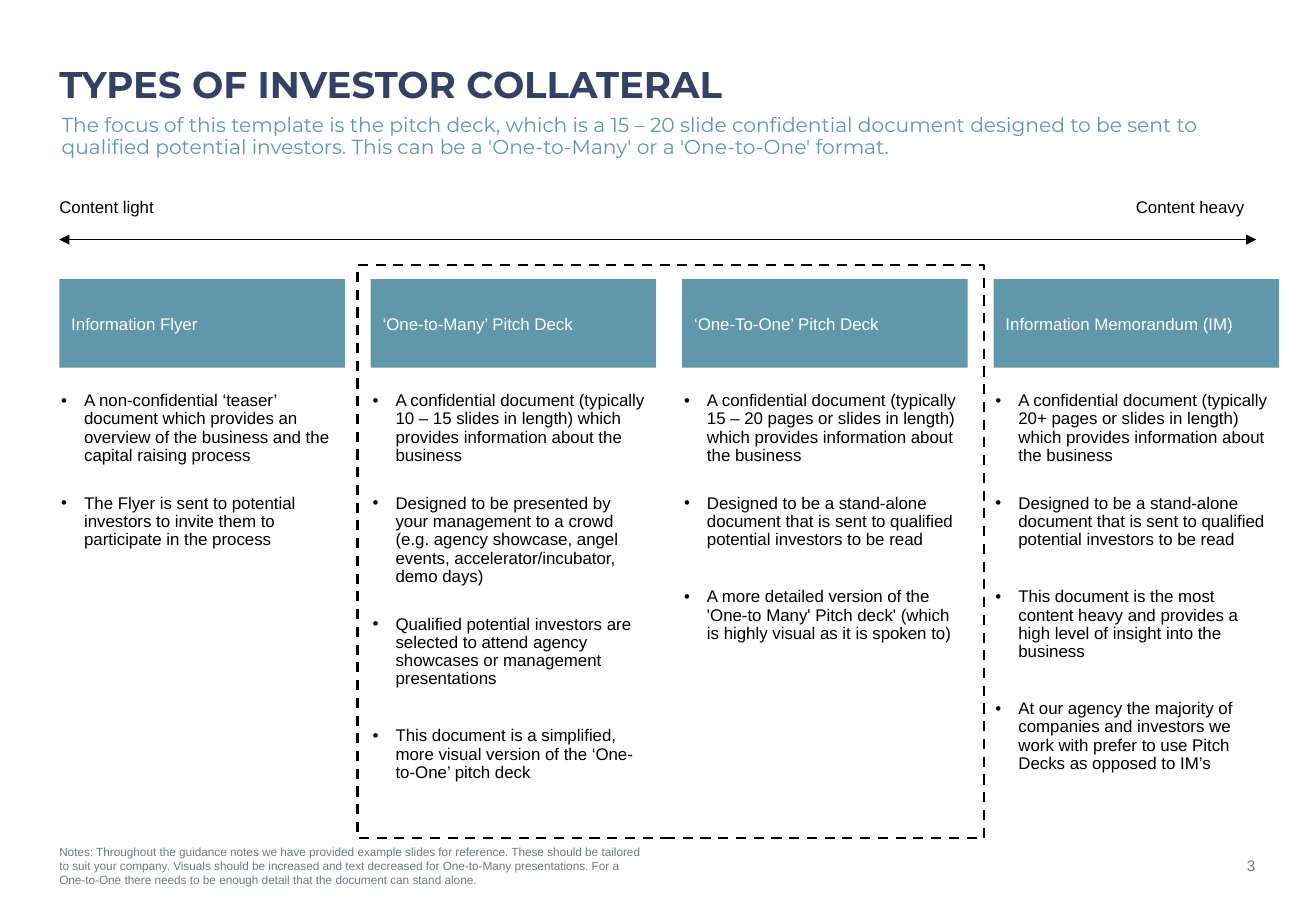
from lxml import etree
from pptx import Presentation
from pptx.dml.color import RGBColor
from pptx.enum.dml import MSO_LINE
from pptx.enum.shapes import MSO_CONNECTOR, MSO_SHAPE
from pptx.enum.text import MSO_ANCHOR, PP_ALIGN
from pptx.oxml.ns import qn
from pptx.util import Cm, Pt

NAVY = RGBColor(0x32, 0x41, 0x64)
TEAL = RGBColor(0x61, 0x97, 0xAA)
GREY = RGBColor(0x6B, 0x7B, 0x82)
BLACK = RGBColor(0, 0, 0)
WHITE = RGBColor(255, 255, 255)

RECTANGLE, STRAIGHT = MSO_SHAPE.RECTANGLE, MSO_CONNECTOR.STRAIGHT
TOP, MIDDLE = MSO_ANCHOR.TOP, MSO_ANCHOR.MIDDLE
LEFT, RIGHT = PP_ALIGN.LEFT, PP_ALIGN.RIGHT
DASH = MSO_LINE.DASH

# Font formats
TITLE = {"name": "Montserrat", "size": Pt(22), "bold": True}
SUBTITLE = {"name": "Montserrat", "size": Pt(12)}
BODY = {"name": "Arial", "size": Pt(10)}
NOTE = {"name": "Arial", "size": Pt(7)}
NUMBER = {"name": "Arial", "size": Pt(9)}

# Margins in cm: left, top, right, bottom
BODY_INSETS = (0, 0, 0.25, 0.13)
HEADER_INSETS = (0.25, 0.13, 0.25, 0.13)

MARGIN = 1.24
COLUMN_WIDTH, COLUMN_STEP = 5.97, 6.51
HEADER_HEIGHT, HEADER_GAP = 1.85, 0.51
NEAR, FAR = 17.5, 23  # space before a bullet, in points

# Each column: heading, then (space before, text) for each bullet
COLUMNS = [
    ("Information Flyer", [
        (0, "A non-confidential ‘teaser’ document which provides an overview of "
            "the business and the capital raising process"),
        (NEAR, "The Flyer is sent to potential investors to invite them to "
               "participate in the process"),
    ]),
    ("‘One-to-Many’ Pitch Deck", [
        (0, "A confidential document (typically 10 – 15 slides in length) which "
            "provides information about the business"),
        (NEAR, "Designed to be presented by your management to a crowd (e.g. agency "
               "showcase, angel events, accelerator/incubator, demo days)"),
        (NEAR, "Qualified potential investors are selected to attend agency "
               "showcases or management presentations"),
        (FAR, "This document is a simplified, more visual version of the "
              "‘One-to-One’ pitch deck"),
    ]),
    ("‘One-To-One’ Pitch Deck", [
        (0, "A confidential document (typically 15 – 20 pages or slides in length) "
            "which provides information about the business"),
        (NEAR, "Designed to be a stand-alone document that is sent to qualified "
               "potential investors to be read"),
        (FAR, "A more detailed version of the 'One-to Many' Pitch deck' (which is "
              "highly visual as it is spoken to)"),
    ]),
    ("Information Memorandum (IM)", [
        (0, "A confidential document (typically 20+ pages or slides in length) "
            "which provides information about the business"),
        (NEAR, "Designed to be a stand-alone document that is sent to qualified "
               "potential investors to be read"),
        (FAR, "This document is the most content heavy and provides a high level "
              "of insight into the business"),
        (FAR, "At our agency the majority of companies and investors we work with "
              "prefer to use Pitch Decks as opposed to IM’s"),
    ]),
]


def apply(target, formats):
    for attribute, value in formats.items():
        setattr(target, attribute, value)


def set_frame(frame, insets, anchor):
    sides = ("margin_left", "margin_top", "margin_right", "margin_bottom")
    apply(frame, dict(zip(sides, map(Cm, insets))))
    apply(frame, {"word_wrap": True, "vertical_anchor": anchor})


def write(paragraph, text, font, color, align=LEFT, spacing=0.9):
    paragraph.text = text
    apply(paragraph, {"alignment": align, "line_spacing": spacing})
    apply(paragraph.font, font)
    paragraph.font.color.rgb = color


def add_text(slide, box, text, font, color, insets=BODY_INSETS, anchor=TOP,
             align=LEFT, spacing=0.9):
    frame = slide.shapes.add_textbox(*map(Cm, box)).text_frame
    set_frame(frame, insets, anchor)
    write(frame.paragraphs[0], text, font, color, align, spacing)


def add_bullet(paragraph):
    properties = paragraph._p.get_or_add_pPr()
    properties.set("marL", str(Cm(0.52)))
    properties.set("indent", str(Cm(-0.48)))
    bullet_color = etree.SubElement(properties, qn("a:buClr"))
    etree.SubElement(bullet_color, qn("a:srgbClr"), val=str(BLACK))
    etree.SubElement(properties, qn("a:buFont"), typeface="Arial")
    etree.SubElement(properties, qn("a:buChar"), char="•")


def add_heading(slide, left, top, width):
    add_text(slide, (left, top, width, 0.91), "TYPES OF INVESTOR COLLATERAL",
             TITLE, NAVY, insets=(0, 0.25, 0.25, 0), anchor=MIDDLE)
    add_text(slide, (left + 0.05, top + 1.19, width - 0.84, 1.09),
             "The focus of this template is the pitch deck, which is a 15 – 20 slide "
             "confidential document designed to be sent to qualified potential "
             "investors. This can be a 'One-to-Many' or a 'One-to-One' format.",
             SUBTITLE, TEAL)


def add_scale(slide, left, top, width):
    label_width, label_height = 3.56, 0.84
    add_text(slide, (left, top, label_width, label_height), "Content light",
             BODY, BLACK)
    add_text(slide, (left + width - label_width, top, label_width, label_height),
             "Content heavy", BODY, BLACK, align=RIGHT)
    arrow_y = Cm(top + label_height)
    arrow = slide.shapes.add_connector(STRAIGHT, Cm(left), arrow_y,
                                       Cm(left + width), arrow_y)
    arrow.line.color.rgb = BLACK
    arrow.line.width = Pt(0.75)
    for end in ("a:headEnd", "a:tailEnd"):
        etree.SubElement(arrow.line._get_or_add_ln(), qn(end), type="triangle")
    etree.SubElement(arrow._element.spPr, qn("a:effectLst"))


def add_column(slide, left, top, width, height, heading, bullets):
    # Heading block
    header = slide.shapes.add_shape(RECTANGLE, Cm(left), Cm(top), Cm(width),
                                    Cm(HEADER_HEIGHT))
    header.shadow.inherit = False
    header.fill.solid()
    header.fill.fore_color.rgb = TEAL
    header.line.fill.background()
    set_frame(header.text_frame, HEADER_INSETS, MIDDLE)
    write(header.text_frame.paragraphs[0], heading, BODY, WHITE, spacing=1.0)

    # Bullet list
    offset = HEADER_HEIGHT + HEADER_GAP
    frame = slide.shapes.add_textbox(Cm(left), Cm(top + offset), Cm(width),
                                     Cm(height - offset)).text_frame
    set_frame(frame, BODY_INSETS, TOP)
    for index, (space, text) in enumerate(bullets):
        paragraph = frame.add_paragraph() if index else frame.paragraphs[0]
        add_bullet(paragraph)
        write(paragraph, text, BODY, BLACK)
        if index:
            paragraph.space_before = Pt(space)


def add_focus_frame(slide, left, top, width, height):
    focus = slide.shapes.add_shape(RECTANGLE, *map(Cm, (left, top, width, height)))
    focus.shadow.inherit = False
    focus.fill.background()
    focus.line.color.rgb = BLACK
    apply(focus.line, {"width": Pt(1.5), "dash_style": DASH})


def add_footer(slide, left, top, width, height):
    add_text(slide, (left, top, 12.42, height),
             "Notes: Throughout the guidance notes we have provided example slides "
             "for reference. These should be tailored to suit your company. Visuals "
             "should be increased and text decreased for One-to-Many presentations. "
             "For a One-to-One there needs to be enough detail that the document can "
             "stand alone.", NOTE, GREY, insets=(0, 0.13, 0.25, 0.13), spacing=1.0)
    add_text(slide, (left + width - height, top, height, height), "3", NUMBER, GREY,
             insets=(0, 0.13, 0, 0), anchor=MIDDLE, align=RIGHT, spacing=1.0)


def main():
    deck = Presentation()
    deck.slide_width, deck.slide_height = Cm(27.51), Cm(19.05)
    slide = deck.slides.add_slide(deck.slide_layouts[6])
    add_heading(slide, MARGIN, 1.22, 25)
    add_scale(slide, MARGIN, 4.17, 25.02)
    for index, (heading, bullets) in enumerate(COLUMNS):
        add_column(slide, MARGIN + index * COLUMN_STEP, 5.84, COLUMN_WIDTH, 10.77,
                   heading, bullets)
    add_focus_frame(slide, 7.47, 5.54, 13.1, 11.99)
    add_footer(slide, MARGIN, 17.53, 25, 0.99)
    deck.save("out.pptx")


if __name__ == "__main__":
    main()
